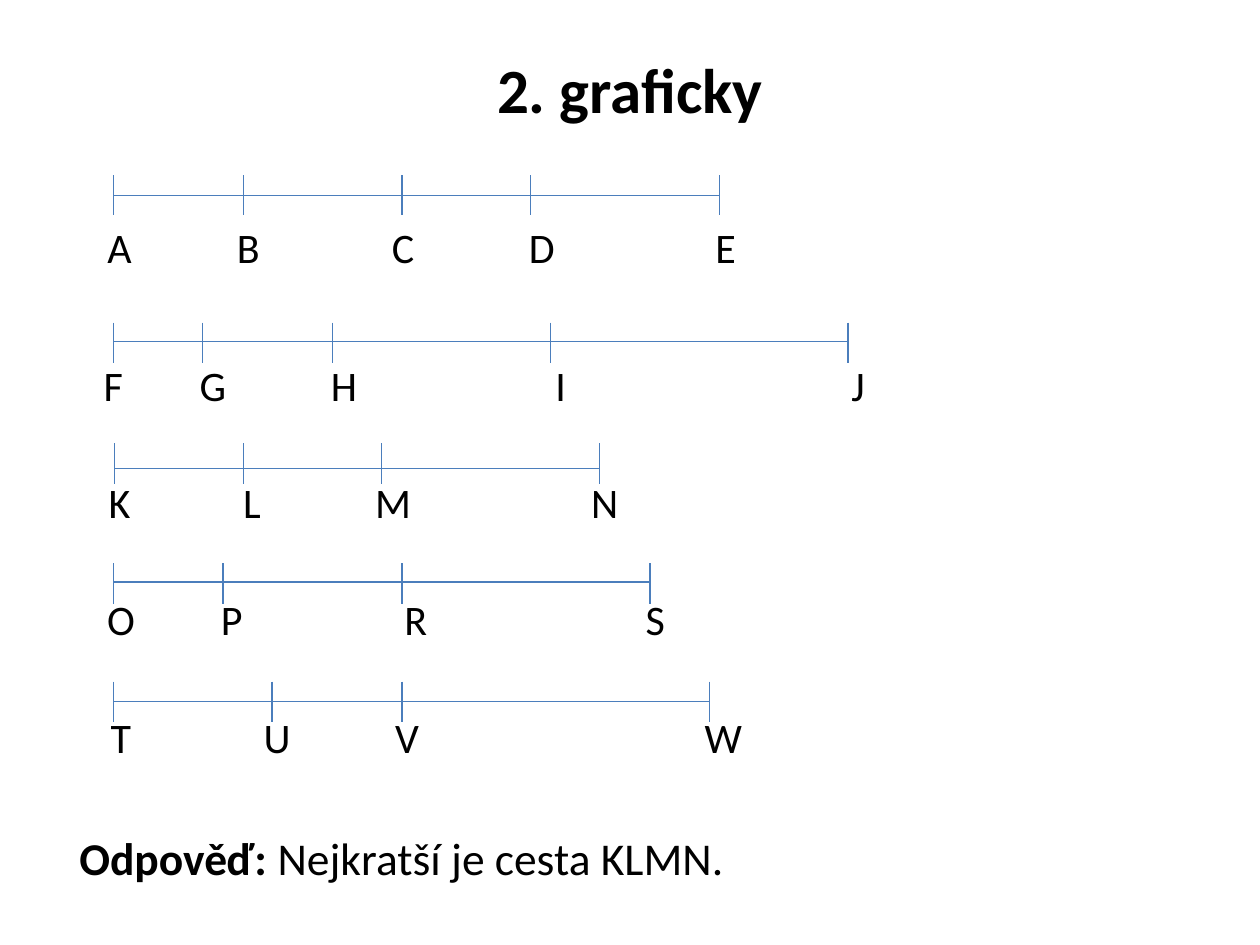
from lxml.etree import SubElement
from pptx import Presentation
from pptx.dml.color import RGBColor
from pptx.enum.shapes import MSO_CONNECTOR
from pptx.enum.text import MSO_ANCHOR, PP_ALIGN
from pptx.oxml.ns import qn
from pptx.util import Inches, Pt

COLORS = {"text": "000000", "line": "4B7EBC"}
FORMATS = {
    "title": {"name": "Calibri", "size": Pt(36), "bold": True},
    "label": {"name": "Calibri", "size": Pt(24), "bold": False},
    "answer_lead": {"name": "Calibri", "size": Pt(26), "bold": True},
    "answer": {"name": "Calibri", "size": Pt(26), "bold": False},
}
TICK_HEIGHT = 0.32
LABEL_HEIGHT = 0.41
ROUTES = [
    {"letters": "ABCDE", "ticks": [0.9, 1.93, 3.19, 4.21, 5.71],
     "centers": [0.95, 1.97, 3.2, 4.3, 5.76],
     "tick_top": 1.39, "axis": 1.55, "label_top": 1.76},
    {"letters": "FGHIJ", "ticks": [0.9, 1.61, 2.64, 4.37, 6.73],
     "centers": [0.9, 1.69, 2.73, 4.45, 6.81],
     "tick_top": 2.56, "axis": 2.71, "label_top": 2.85},
    {"letters": "KLMN", "ticks": [0.91, 1.93, 3.03, 4.76],
     "centers": [0.95, 2.0, 3.12, 4.8],
     "tick_top": 3.52, "axis": 3.72, "label_top": 3.78},
    {"letters": "OPRS", "ticks": [0.9, 1.77, 3.19, 5.16],
     "centers": [0.96, 1.84, 3.3, 5.2],
     "tick_top": 4.47, "axis": 4.62, "label_top": 4.71},
    {"letters": "TUVW", "ticks": [0.9, 2.16, 3.19, 5.63],
     "centers": [0.96, 2.2, 3.23, 5.74],
     "tick_top": 5.41, "axis": 5.57, "label_top": 5.65},
]


def add_run(paragraph, text, style):
    """Append a run of text in one of the named formats."""
    run = paragraph.add_run()
    run.text = text
    for attribute, value in FORMATS[style].items():
        setattr(run.font, attribute, value)
    run.font.color.rgb = RGBColor.from_string(COLORS["text"])


def add_text_box(slide, left, top, width, height):
    """Add a wrapping text box without margins and return its paragraph."""
    box = slide.shapes.add_textbox(*map(Inches, (left, top, width, height)))
    frame = box.text_frame
    frame.word_wrap = True
    for side in ("left", "top", "right", "bottom"):
        setattr(frame, f"margin_{side}", 0)
    return frame.paragraphs[0]


def add_line(shapes, *ends):
    """Draw a thin straight line between two points."""
    line = shapes.add_connector(MSO_CONNECTOR.STRAIGHT, *map(Inches, ends))
    line.line.color.rgb = RGBColor.from_string(COLORS["line"])
    line.line.width = Pt(0.75)
    SubElement(line._element.spPr, qn("a:effectLst"))


def add_title(slide, left, top, width, height):
    """Place and format the slide title."""
    title = slide.shapes.title
    box = {"left": left, "top": top, "width": width, "height": height}
    for attribute, value in box.items():
        setattr(title, attribute, Inches(value))
    title.text_frame.vertical_anchor = MSO_ANCHOR.MIDDLE
    paragraph = title.text_frame.paragraphs[0]
    paragraph.alignment = PP_ALIGN.CENTER
    add_run(paragraph, "2. graficky", "title")


def add_route(slide, left, width, route):
    """Draw one measured route and letter its points at centred tab stops."""
    shapes = slide.shapes.add_group_shape().shapes
    ticks, top, axis = route["ticks"], route["tick_top"], route["axis"]
    add_line(shapes, ticks[0], axis, ticks[-1], axis)
    for tick in ticks:
        add_line(shapes, tick, top, tick, top + TICK_HEIGHT)

    paragraph = add_text_box(slide, left, route["label_top"], width, LABEL_HEIGHT)
    tabs = SubElement(paragraph._p.get_or_add_pPr(), qn("a:tabLst"))
    for center in route["centers"]:
        SubElement(tabs, qn("a:tab"), pos=str(Inches(center - left)), algn="ctr")
    add_run(paragraph, "".join(f"\t{letter}" for letter in route["letters"]), "label")


def add_answer(slide, left, top, width, height):
    """Write the answer with its bold lead-in."""
    paragraph = add_text_box(slide, left, top, width, height)
    add_run(paragraph, "Odpověď: ", "answer_lead")
    add_run(paragraph, "Nejkratší je cesta KLMN.", "answer")


def main():
    """Build and save the slide."""
    presentation = Presentation()
    presentation.slide_width, presentation.slide_height = Inches(10), Inches(7.5)
    slide = presentation.slides.add_slide(presentation.slide_layouts[5])
    add_title(slide, 0.5, 0.3, 9, 0.81)
    for route in ROUTES:
        add_route(slide, 0.53, 9, route)
    add_answer(slide, 0.63, 6.59, 8.8, 0.45)
    presentation.save("out.pptx")


if __name__ == "__main__":
    main()
